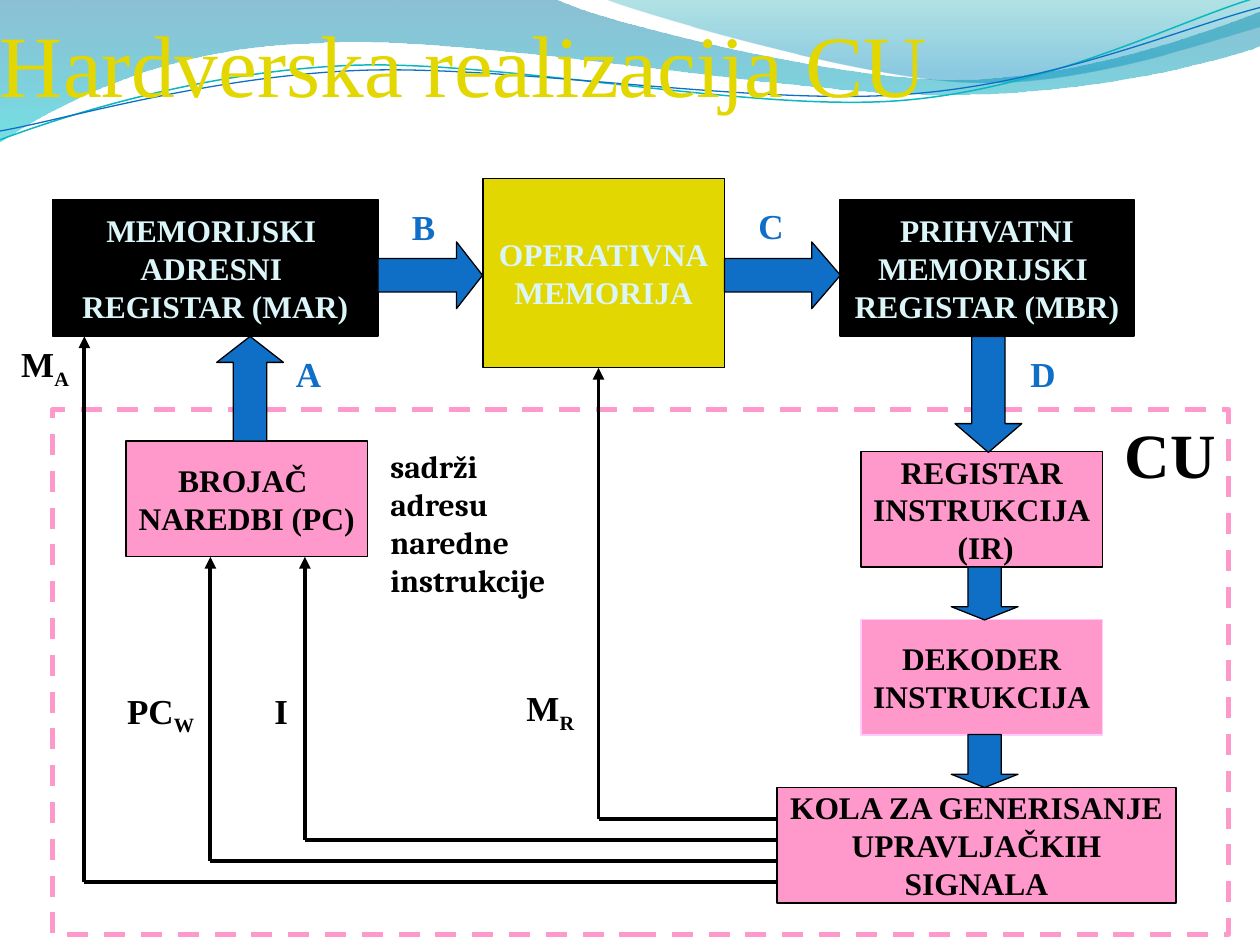
import lxml.etree
import pptx
import pptx.dml.color
import pptx.enum.dml
import pptx.enum.shapes
import pptx.enum.text
import pptx.oxml
import pptx.oxml.ns
import pptx.util

Inches = pptx.util.Inches
qn = pptx.oxml.ns.qn
SHAPES = pptx.enum.shapes.MSO_SHAPE
ANCHOR = pptx.enum.text.MSO_ANCHOR
ALIGN = pptx.enum.text.PP_ALIGN
BLACK, BLUE, PINK, YELLOW, PALE = "000000", "0F6FC6", "FF99CC", "E2D700", "DBF5F9"
SERIF = "Times New Roman"
GRID = 12  # blocks sit on a grid of twelfths of an inch


def color(hex_string):
    return pptx.dml.color.RGBColor.from_string(hex_string)


def snap(box):
    return [round(value * GRID) / GRID for value in box]


def set_line(shape, line_color, width):
    if line_color is None:
        shape.line.fill.background()
    else:
        shape.line.color.rgb = color(line_color)
        shape.line.width = pptx.util.Pt(width)


def write(frame, lines, size, text_color, bold=True, font=SERIF, **formats):
    """Write lines as paragraphs; a (base, subscript) pair makes two runs."""
    for name, value in formats.items():
        setattr(frame, name, value)
    for index, line in enumerate(lines):
        paragraph = frame.paragraphs[0] if index == 0 else frame.add_paragraph()
        parts = line if isinstance(line, tuple) else (line,)
        for part_index, part in enumerate(parts):
            run = paragraph.add_run()
            run.text = part
            values = {"name": font, "size": pptx.util.Pt(size), "bold": bold}
            for name, value in values.items():
                setattr(run.font, name, value)
            run.font.color.rgb = color(text_color)
            if part_index:
                run._r.get_or_add_rPr().set("baseline", "-25000")


def add_label(slide, box, line, size=20, text_color=BLACK, wrap=False, **formats):
    shape = slide.shapes.add_textbox(*map(Inches, box))
    write(shape.text_frame, [line], size, text_color, word_wrap=wrap, **formats)


def add_preset(slide, kind, box, fill, line_color=BLACK, width=0.75):
    shape = slide.shapes.add_shape(kind, *map(Inches, box))
    shape.shadow.inherit = False
    if fill:
        shape.fill.solid()
        shape.fill.fore_color.rgb = color(fill)
    else:
        shape.fill.background()
    set_line(shape, line_color, width)
    return shape


def add_block(slide, box, lines, fill=PINK, text_color=BLACK, line_color=BLACK):
    shape = add_preset(slide, SHAPES.RECTANGLE, snap(box), fill, line_color)
    write(shape.text_frame, lines, 18, text_color, word_wrap=False,
          vertical_anchor=ANCHOR.MIDDLE)
    for paragraph in shape.text_frame.paragraphs:
        paragraph.alignment = ALIGN.CENTER


def add_block_arrow(slide, kind, box, head):
    shape = add_preset(slide, kind, box, BLUE)
    shape.adjustments[0] = 0.5
    shape.adjustments[1] = head


def add_signal_line(slide, start, end, arrow=False):
    points = map(Inches, (*start, *end))
    line = slide.shapes.add_connector(pptx.enum.shapes.MSO_CONNECTOR.STRAIGHT, *points)
    set_line(line, BLACK, 2.25)
    if arrow:
        lxml.etree.SubElement(line.line._get_or_add_ln(), qn("a:tailEnd"), type="triangle")
    lxml.etree.SubElement(line._element.spPr, qn("a:effectLst"))


def bend(shape, segments):
    """Merge the three lines of each six-number segment into one Bezier curve."""
    lines = iter(list(shape._element.iter(qn("a:lnTo"))))
    for segment in segments:
        line = next(lines)
        if len(segment) == 6:
            line.addprevious(curve := lxml.etree.Element(qn("a:cubicBezTo")))
            for corner in (line, next(lines), next(lines)):
                curve.append(corner[0])
                corner.getparent().remove(corner)


def add_wave(slide, start, segments, stops=None, line_color=None, width=0.75):
    builder = slide.shapes.build_freeform(*map(Inches, start))
    corners = [tuple(map(Inches, segment[i:i + 2]))
               for segment in segments for i in range(0, len(segment), 2)]
    builder.add_line_segments(corners, close=stops is not None)
    shape = builder.convert_to_shape()
    bend(shape, segments)
    shape.shadow.inherit = False
    shape.fill.background()
    set_line(shape, line_color, width)
    if stops:
        stop_xml = "".join(
            f'<a:gs pos="{place * 1000}"><a:srgbClr val="{tone}">'
            f'<a:alpha val="{alpha * 1000}"/></a:srgbClr></a:gs>'
            for place, tone, alpha in stops)
        gradient = pptx.oxml.parse_xml(
            f'<a:gradFill {pptx.oxml.ns.nsdecls("a")}><a:gsLst>{stop_xml}</a:gsLst>'
            '<a:lin ang="5400000" scaled="0"/></a:gradFill>')
        properties = shape._element.spPr
        properties.replace(properties.find(qn("a:noFill")), gradient)


def add_header(slide, box):
    # Translucent waves, then the two thin curves
    add_wave(slide, (0, 0), [
        (4.4, -0.01), (4.76, 0.17, 6.64, 0.63, 7.58, 0.63), (8.53, 0.63, 9.58, 0.26, 10, 0.09),
        (10.01, 0.36), (9.83, 0.44, 8.7, 0.76, 7.46, 0.75), (6.22, 0.75, 3.82, 0.28, 2.57, 0.34),
        (1.29, 0.36, 0.46, 0.83, -0.01, 1.13), (0, 0)], [(0, "0074A1", 45), (100, "00C6CF", 55)])
    add_wave(slide, (4.79, -0.01), [
        (5.09, 0.11, 6.82, 0.62, 7.69, 0.65), (8.56, 0.69, 9.61, 0.32, 10, 0.21), (10, 0),
        (4.79, -0.01)], [(0, "00A1A9", 30), (80, "008BBF", 45)])
    add_wave(slide, (0, 1.11), [
        (0.48, 0.93, 1.58, 0.57, 2.77, 0.52), (3.95, 0.47, 5.93, 0.89, 7.13, 0.8),
        (8.33, 0.71, 9.38, 0.15, 9.98, -0.02)], line_color="0AB8BF", width=0.85)
    add_wave(slide, (0, 1.04), [
        (0.47, 0.96, 1.64, 0.61, 2.83, 0.56), (4.03, 0.51, 5.97, 0.84, 7.17, 0.75),
        (8.36, 0.67, 9.41, 0.21, 10, 0.06)], line_color=BLUE)
    # Title
    add_label(slide, box, "Hardverska realizacija CU", 50, YELLOW, wrap=True, bold=False,
              vertical_anchor=ANCHOR.BOTTOM, margin_left=0, margin_right=0, margin_bottom=0)


def add_memory_row(slide, left, top, height):
    add_block(slide, (3.83, top - 0.16, 1.92, 1.5), ["OPERATIVNA", "MEMORIJA"], YELLOW, PALE)
    add_block(slide, (left, top, 2.58, height),
              ["MEMORIJSKI ", "ADRESNI ", "REGISTAR (MAR)"], BLACK, PALE)
    add_block(slide, (6.67, top, 2.33, height),
              ["PRIHVATNI", "MEMORIJSKI ", "REGISTAR (MBR)"], BLACK, PALE)


def add_control_unit(slide, box):
    left, top, width, height = box
    for place, lines, line_color in (
            ((6.83, 3.58, 1.92, 0.92), ["REGISTAR", "INSTRUKCIJA", " (IR)"], BLACK),
            ((6.83, 4.92, 1.92, 0.92), ["DEKODER", "INSTRUKCIJA"], "FFCCFF"),
            ((6.17, 6.25, 3.17, 0.92),
             ["KOLA ZA GENERISANJE", "UPRAVLJAČKIH", "SIGNALA"], BLACK),
            ((1, 3.5, 1.92, 0.92), ["BROJAČ ", "NAREDBI (PC)"], BLACK)):
        add_block(slide, place, lines, line_color=line_color)
    frame = add_preset(slide, SHAPES.RECTANGLE, snap(box), None, PINK, 3)
    frame.line.dash_style = pptx.enum.dml.MSO_LINE.DASH
    add_label(slide, (left + width - 0.92, top, 0.92, 0.7), "CU", 36)
    add_label(slide, (3, 3.5, 1.67, 1), "sadrži adresu naredne instrukcije", 18,
              wrap=True, font="Cambria")


def add_signals(slide, source_x, bottom):
    # Each signal leaves the generator leftwards, then rises to its target
    targets = ((0.67, 2.67), (1.67, 4.42), (2.42, 4.42), (4.75, 2.92))
    for index, (x, target_y) in enumerate(targets):
        y = bottom - index / 6
        add_signal_line(slide, (source_x, y), (x, y))
        add_signal_line(slide, (x, y), (x, target_y), arrow=True)
    for box, line in (((0.07, 2.67, 0.59, 0.43), ("M", "A")),
                      ((2.08, 5.42, 0.33, 0.43), "I"),
                      ((0.91, 5.42, 0.75, 0.43), ("PC", "W")),
                      ((4.08, 5.4, 0.59, 0.43), ("M", "R"))):
        add_label(slide, box, line)


def add_data_flow(slide):
    for kind, box, head in ((SHAPES.UP_ARROW, (1.72, 2.67, 0.53, 0.83), 0.39),
                            (SHAPES.RIGHT_ARROW, (3, 1.92, 0.83, 0.53), 0.39),
                            (SHAPES.RIGHT_ARROW, (5.75, 1.92, 0.92, 0.53), 0.43),
                            (SHAPES.DOWN_ARROW, (7.58, 2.67, 0.53, 0.92), 0.43),
                            (SHAPES.DOWN_ARROW, (7.55, 4.5, 0.53, 0.42), 0.25),
                            (SHAPES.DOWN_ARROW, (7.55, 5.83, 0.53, 0.42), 0.25)):
        add_block_arrow(slide, kind, box, head)
    for letter, left, top in (("A", 2.25, 2.75), ("C", 5.92, 1.57),
                              ("B", 3.17, 1.58), ("D", 8.08, 2.75)):
        add_label(slide, (left, top, 0.4, 0.43), letter, text_color=BLUE)


def main():
    presentation = pptx.Presentation()
    presentation.slide_width, presentation.slide_height = Inches(10), Inches(7.5)
    slide = presentation.slides.add_slide(presentation.slide_layouts[6])
    add_header(slide, (0, 0, 10, 0.91))
    add_memory_row(slide, 0.42, 1.58, 1.08)
    add_control_unit(slide, (0.42, 3.25, 9.33, 4.17))
    add_signals(slide, 6.17, 7)
    add_data_flow(slide)
    presentation.save("out.pptx")


if __name__ == "__main__":
    main()
